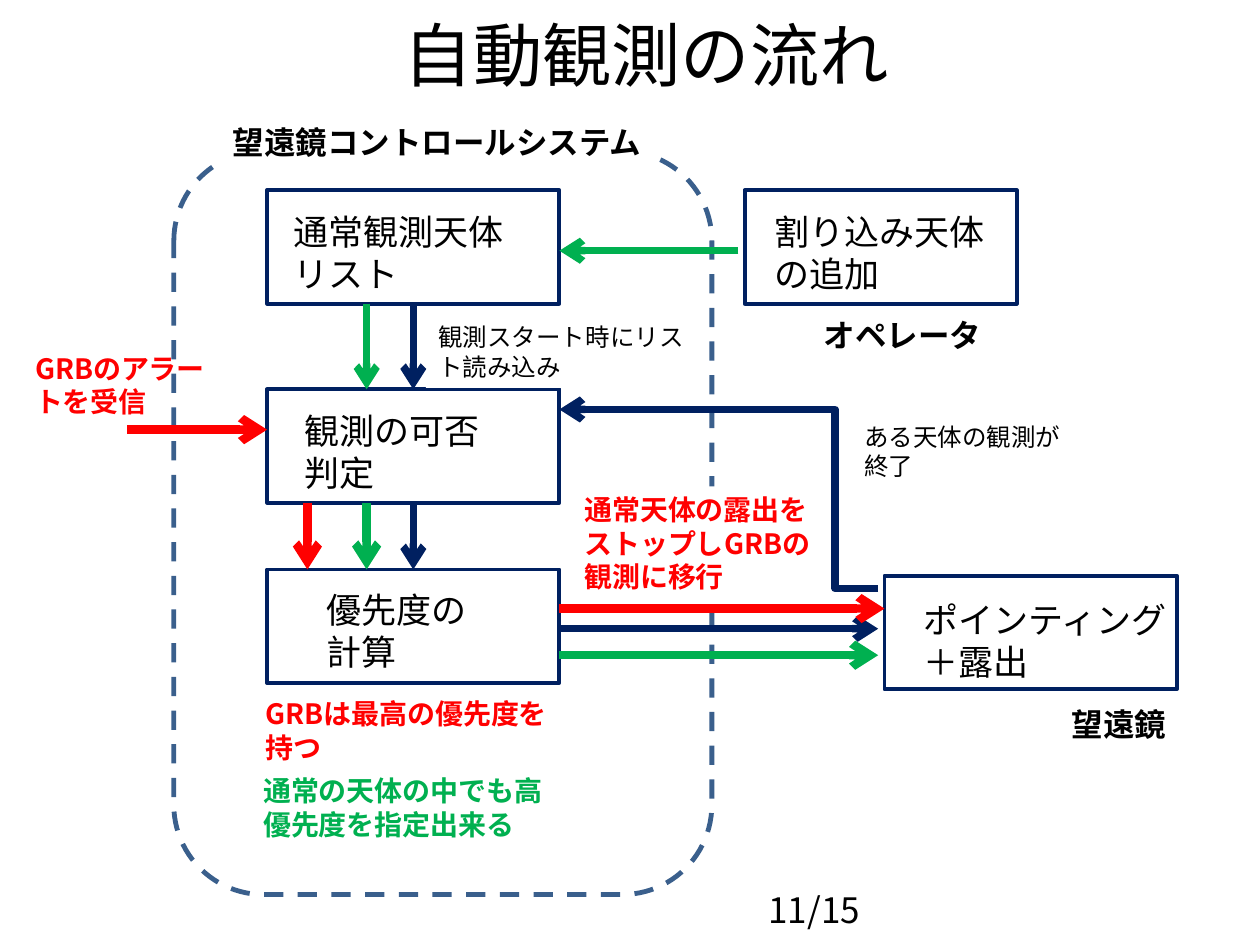
import pptx
import pptx.util
import pptx.dml.color
import pptx.enum.dml
import pptx.enum.shapes
import pptx.enum.text
import pptx.oxml
import pptx.oxml.ns
import lxml.etree

RGBColor = pptx.dml.color.RGBColor
NAVY = RGBColor(0x00, 0x20, 0x60)
BLUE = RGBColor(0x3A, 0x5F, 0x8C)
RED = RGBColor(0xFF, 0x00, 0x00)
GREEN = RGBColor(0x00, 0xB0, 0x50)
BLACK = RGBColor(0x00, 0x00, 0x00)
WHITE = RGBColor(0xFF, 0xFF, 0xFF)
NOTO = "Noto Sans CJK JP"
KIND = pptx.enum.shapes.MSO_SHAPE
LINK = pptx.enum.shapes.MSO_CONNECTOR
Pt = pptx.util.Pt
tag = pptx.oxml.ns.qn

deck = pptx.Presentation()
deck.slide_width = pptx.util.Inches(10)
deck.slide_height = pptx.util.Inches(7.5)
slide = deck.slides.add_slide(deck.slide_layouts[6])
col = deck.slide_width / 100
row = deck.slide_height / 75


def place(x, y, wide, high):
    return round(x * col), round(y * row), round(wide * col), round(high * row)


def write(words, spot, size, ink=BLACK, bold=False, wrap=True, back=None, face=NOTO):
    box = slide.shapes.add_textbox(*place(*spot))
    if back is not None:
        box.fill.solid()
        box.fill.fore_color.rgb = back
    frame = box.text_frame
    frame.word_wrap = wrap
    frame.auto_size = pptx.enum.text.MSO_AUTO_SIZE.SHAPE_TO_FIT_TEXT
    run = frame.paragraphs[0].add_run()
    run.text = words
    run.font.size = Pt(size)
    run.font.bold = bold
    run.font.name = face
    run.font.color.rgb = ink
    east = lxml.etree.SubElement(run.font._element, tag("a:ea"))
    east.set("typeface", face)
    return frame


title = write("自動観測の流れ", (6.3, 1, 90, 6.6), 39.6, face="Calibri")
title.auto_size = pptx.enum.text.MSO_AUTO_SIZE.NONE
title.vertical_anchor = pptx.enum.text.MSO_ANCHOR.MIDDLE
title.paragraphs[0].alignment = pptx.enum.text.PP_ALIGN.CENTER

left, right = 21.2, 44.4
list_y, judge_y, rank_y = 15.1, 30.9, 45.2
tall = 9
wide = right - left
frames = [
    (KIND.ROUNDED_RECTANGLE, (13.8, 12, 42.7, 59), BLUE, 2.75),
    (KIND.RECTANGLE, (left, list_y, wide, tall), NAVY, 2.25),
    (KIND.RECTANGLE, (left, judge_y, wide, tall), NAVY, 2.25),
    (KIND.RECTANGLE, (left, rank_y, wide, tall), NAVY, 2.25),
    (KIND.RECTANGLE, (70.2, 45.7, wide, tall), NAVY, 2.25),
    (KIND.RECTANGLE, (59.1, list_y, 21.6, tall), NAVY, 2.25),
]
for kind, spot, ink, thick in frames:
    shape = slide.shapes.add_shape(kind, *place(*spot))
    shape.shadow.inherit = False
    shape.fill.background()
    shape.line.color.rgb = ink
    shape.line.width = Pt(thick)
    if kind == KIND.ROUNDED_RECTANGLE:
        shape.line.dash_style = pptx.enum.dml.MSO_LINE.DASH

labels = [
    ("通常観測天体　リスト", (22.3, 16.2, 23.2, 7.7), 20, BLACK, False, True, None),
    ("観測の可否判定", (23.2, 32, 18, 7.7), 20, BLACK, False, True, None),
    ("優先度の計算", (24.9, 46.2, 14.8, 7.7), 20, BLACK, False, True, None),
    ("ポインティング＋露出", (72.3, 47, 21.4, 7.1), 20, BLACK, False, True, None),
    ("割り込み天体の追加", (60.5, 16.2, 20.3, 7.7), 20, BLACK, False, True, None),
    ("GRBのアラートを受信", (1.8, 27.4, 15.8, 6.4), 16, RED, True, True, None),
    ("GRBは最高の優先度を持つ", (20.1, 54.8, 25.3, 6.4), 16, RED, True, True, None),
    ("通常の天体の中でも高優先度を指定出来る", (19.9, 60.9, 25.5, 6.4), 16, GREEN, True, True, None),
    ("観測スタート時にリスト読み込み", (33.8, 25.1, 21.5, 5.7), 14, BLACK, False, True, WHITE),
    ("通常天体の露出をストップしGRBの観測に移行", (45.4, 38.6, 20, 9.1), 16, RED, True, True, WHITE),
    ("ある天体の観測が終了", (67.6, 33, 17.9, 5.7), 14, BLACK, False, True, None),
    ("望遠鏡コントロールシステム", (17.5, 9.3, 34.8, 4), 18, BLACK, True, False, WHITE),
    ("望遠鏡", (84.1, 55.5, 9.6, 4), 18, BLACK, True, False, WHITE),
    ("オペレータ", (64.4, 24.6, 19.5, 4), 18, BLACK, True, True, None),
    ("11/15", (60, 70, 10.2, 4.4), 20, BLACK, False, False, None),
]
for label in labels:
    write(*label)

list_end, judge_end = list_y + tall, judge_y + tall
arrows = [
    (LINK.STRAIGHT, (32.8, list_end, 32.8, judge_y), NAVY, 4.25),
    (LINK.STRAIGHT, (32.8, judge_end, 32.8, rank_y), NAVY, 4.25),
    (LINK.STRAIGHT, (right, 49.9, 69.7, 49.9), NAVY, 4.25),
    (LINK.STRAIGHT, (10.1, 34.1, left, 34.1), RED, 4.75),
    (LINK.STRAIGHT, (24.4, judge_end, 24.4, rank_y), RED, 4.75),
    (LINK.STRAIGHT, (right, 48.3, 70.2, 48.3), RED, 4.75),
    (LINK.ELBOW, (69.7, 46.7, right, 32.5), NAVY, 4.25),
    (LINK.STRAIGHT, (58.6, 19.9, right, 19.9), GREEN, 4.25),
    (LINK.STRAIGHT, (29.1, list_end, 29.1, judge_y), GREEN, 4.25),
    (LINK.STRAIGHT, (29.1, judge_end, 29.1, rank_y), GREEN, 4.75),
    (LINK.STRAIGHT, (right, 52, 69.7, 52), GREEN, 4.75),
]
for kind, ends, ink, thick in arrows:
    arrow = slide.shapes.add_connector(kind, *place(*ends))
    arrow.line.color.rgb = ink
    arrow.line.width = Pt(thick)
    props = arrow._element.spPr
    tip = lxml.etree.SubElement(arrow.line._get_or_add_ln(), tag("a:tailEnd"))
    tip.set("type", "arrow")
    lxml.etree.SubElement(props, tag("a:effectLst"))
    if kind == LINK.ELBOW:
        guide = lxml.etree.SubElement(props.find(".//" + tag("a:avLst")), tag("a:gd"))
        guide.set("name", "adj1")
        guide.set("fmla", "val 13500")

deck.save("out.pptx")
